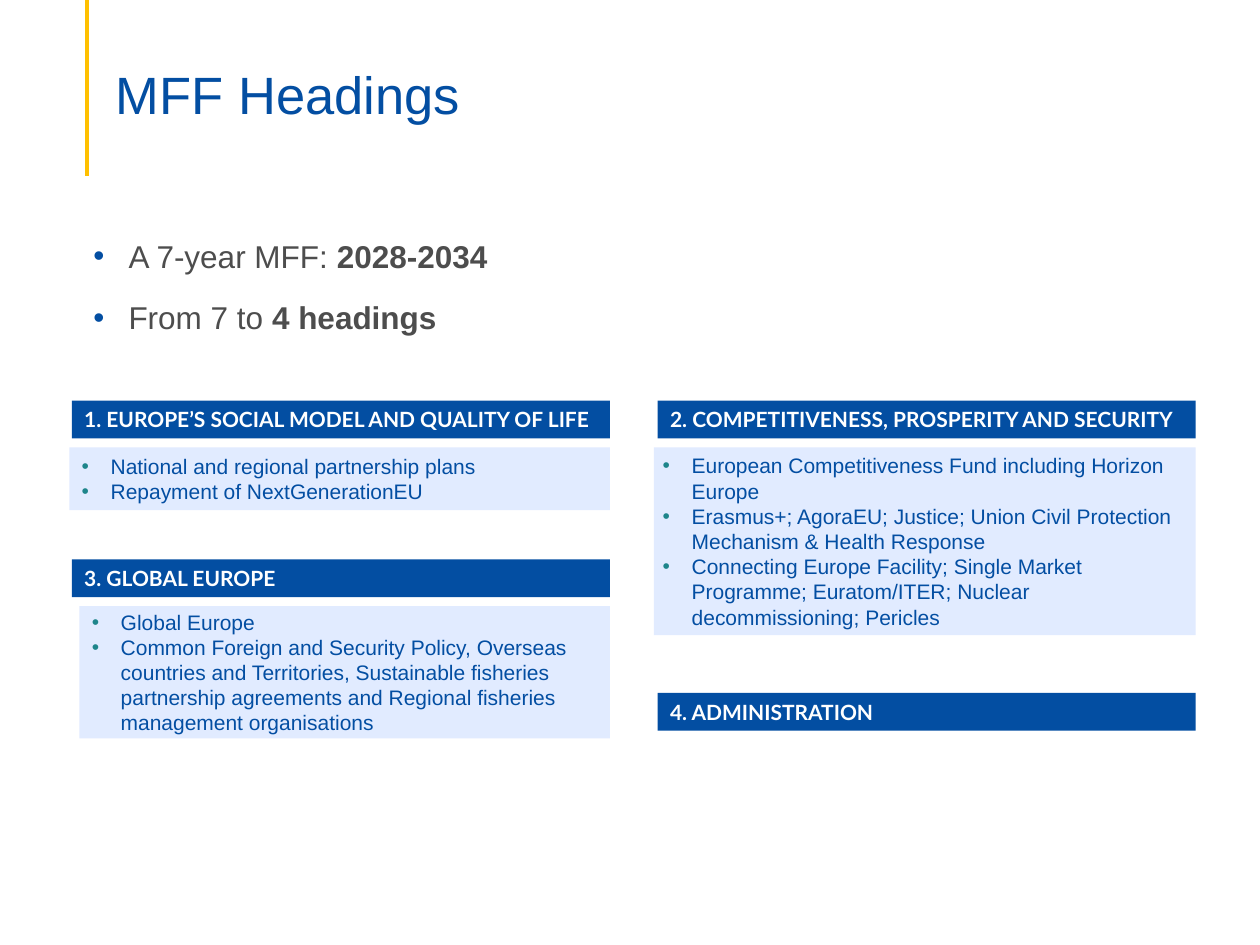
from lxml import etree
from pptx import Presentation
from pptx.dml.color import RGBColor
from pptx.enum.shapes import MSO_CONNECTOR, MSO_SHAPE
from pptx.enum.text import MSO_ANCHOR, MSO_AUTO_SIZE, PP_ALIGN
from pptx.oxml.ns import qn
from pptx.util import Inches, Pt

RECTANGLE = MSO_SHAPE.RECTANGLE
STRAIGHT = MSO_CONNECTOR.STRAIGHT
TOP, MIDDLE, BOTTOM = MSO_ANCHOR.TOP, MSO_ANCHOR.MIDDLE, MSO_ANCHOR.BOTTOM
NO_FIT, GROW = MSO_AUTO_SIZE.NONE, MSO_AUTO_SIZE.SHAPE_TO_FIT_TEXT
LEFT = PP_ALIGN.LEFT

COLORS = {"blue": "034EA2", "pale": "E1EBFF", "gold": "FFC000",
          "gray": "4D4D4D", "teal": "1E858B", "white": "FFFFFF"}

# Content
TITLE = "MFF Headings"
KEY_POINTS = [("A 7-year MFF: ", "2028-2034"), ("From 7 to ", "4 headings")]
# Each heading: left, top, title, list left, list height, list side inset, items
HEADINGS = [
    (0.57, 3.18, "1. EUROPE’S SOCIAL MODEL AND QUALITY OF LIFE", 0.55, 0.5, 0.1, [
        "National and regional partnership plans",
        "Repayment of NextGenerationEU"]),
    (0.57, 4.44, "3. GLOBAL EUROPE", 0.63, 1.05, 0.1, [
        "Global Europe",
        "Common Foreign and Security Policy, Overseas countries and Territories, "
        "Sustainable fisheries partnership agreements and Regional fisheries "
        "management organisations"]),
    (5.22, 3.18, "2. COMPETITIVENESS, PROSPERITY AND SECURITY", 5.19, 1.49, 0.07, [
        "European Competitiveness Fund including Horizon Europe",
        "Erasmus+; AgoraEU; Justice; Union Civil Protection Mechanism & Health Response",
        "Connecting Europe Facility; Single Market Programme; Euratom/ITER; "
        "Nuclear decommissioning; Pericles"]),
    (5.22, 5.5, "4. ADMINISTRATION", 5.22, 0, 0, []),
]
BAR_WIDTH, BAR_HEIGHT, LIST_OFFSET = 4.27, 0.3, 0.37


def rgb(name):
    return RGBColor.from_string(COLORS[name])


def place(shape, left, top, width, height):
    shape.left, shape.top = Inches(left), Inches(top)
    shape.width, shape.height = Inches(width), Inches(height)


def set_frame(frame, anchor, insets, fit=NO_FIT):
    frame.word_wrap = True
    frame.auto_size = fit
    frame.vertical_anchor = anchor
    (frame.margin_left, frame.margin_top,
     frame.margin_right, frame.margin_bottom) = map(Inches, insets)


def set_font(para, size, color, name="Arial", bold=None):
    para.alignment = LEFT
    para.font.size, para.font.name = Pt(size), name
    para.font.color.rgb = rgb(color)
    para.font.bold = bold


def add_bullet(para, indent, color):
    properties = para._p.get_or_add_pPr()
    properties.set("marL", str(Inches(indent)))
    properties.set("indent", str(-Inches(indent)))
    bullet_color = etree.SubElement(properties, qn("a:buClr"))
    etree.SubElement(bullet_color, qn("a:srgbClr"), val=COLORS[color])
    etree.SubElement(properties, qn("a:buFont"), typeface="Arial")
    etree.SubElement(properties, qn("a:buChar"), char="•")


def next_paragraph(frame, index):
    return frame.add_paragraph() if index else frame.paragraphs[0]


def add_panel(group, left, top, width, height, color):
    panel = group.shapes.add_shape(
        RECTANGLE, Inches(left), Inches(top), Inches(width), Inches(height))
    panel.shadow.inherit = False
    panel.fill.solid()
    panel.fill.fore_color.rgb = rgb(color)
    panel.line.fill.background()
    return panel.text_frame


deck = Presentation()
deck.slide_width, deck.slide_height = Inches(10), Inches(7.5)
page = deck.slides.add_slide(deck.slide_layouts[1])

# Gold rule beside the title
rule = page.shapes.add_connector(STRAIGHT, Inches(0.69), 0, Inches(0.69), Inches(1.4))
rule.line.color.rgb = rgb("gold")
rule.line.width = Pt(2.25)
etree.SubElement(rule._element.spPr, qn("a:effectLst"))

# Title
title = page.shapes.title
place(title, 0.82, 0.11, 8.93, 0.89)
set_frame(title.text_frame, BOTTOM, (0.1, 0.05, 0.1, 0))
title.text_frame.text = TITLE
title_para = title.text_frame.paragraphs[0]
title_para.line_spacing = 0.9
set_font(title_para, 30, "blue")

# Key points
body = page.placeholders[1]
place(body, 0.62, 1.76, 8.62, 0.67)
set_frame(body.text_frame, TOP, (0.12,) * 4)
for index, (lead, emphasis) in enumerate(KEY_POINTS):
    para = next_paragraph(body.text_frame, index)
    add_bullet(para, 0.28, "blue")
    para.space_before, para.space_after = Pt(0), Pt(13.5)
    set_font(para, 18, "gray")
    para.add_run().text = lead
    span = para.add_run()
    span.text = emphasis
    span.font.bold = True

# Headings with their programme lists, both ending at the same right edge
for left, top, heading, list_left, list_height, inset, items in HEADINGS:
    group = page.shapes.add_group_shape()
    if items:
        frame = add_panel(group, list_left, top + LIST_OFFSET,
                          left + BAR_WIDTH - list_left, list_height, "pale")
        set_frame(frame, MIDDLE, (inset, 0, inset, 0))
        for index, item in enumerate(items):
            para = next_paragraph(frame, index)
            add_bullet(para, 0.23, "teal")
            para.add_run().text = item
            set_font(para, 12, "blue")
    frame = add_panel(group, left, top, BAR_WIDTH, BAR_HEIGHT, "blue")
    set_frame(frame, TOP, (0.1, 0.05, 0.1, 0.05), GROW)
    frame.text = heading
    set_font(frame.paragraphs[0], 12, "white", "Lato", True)

deck.save("out.pptx")
